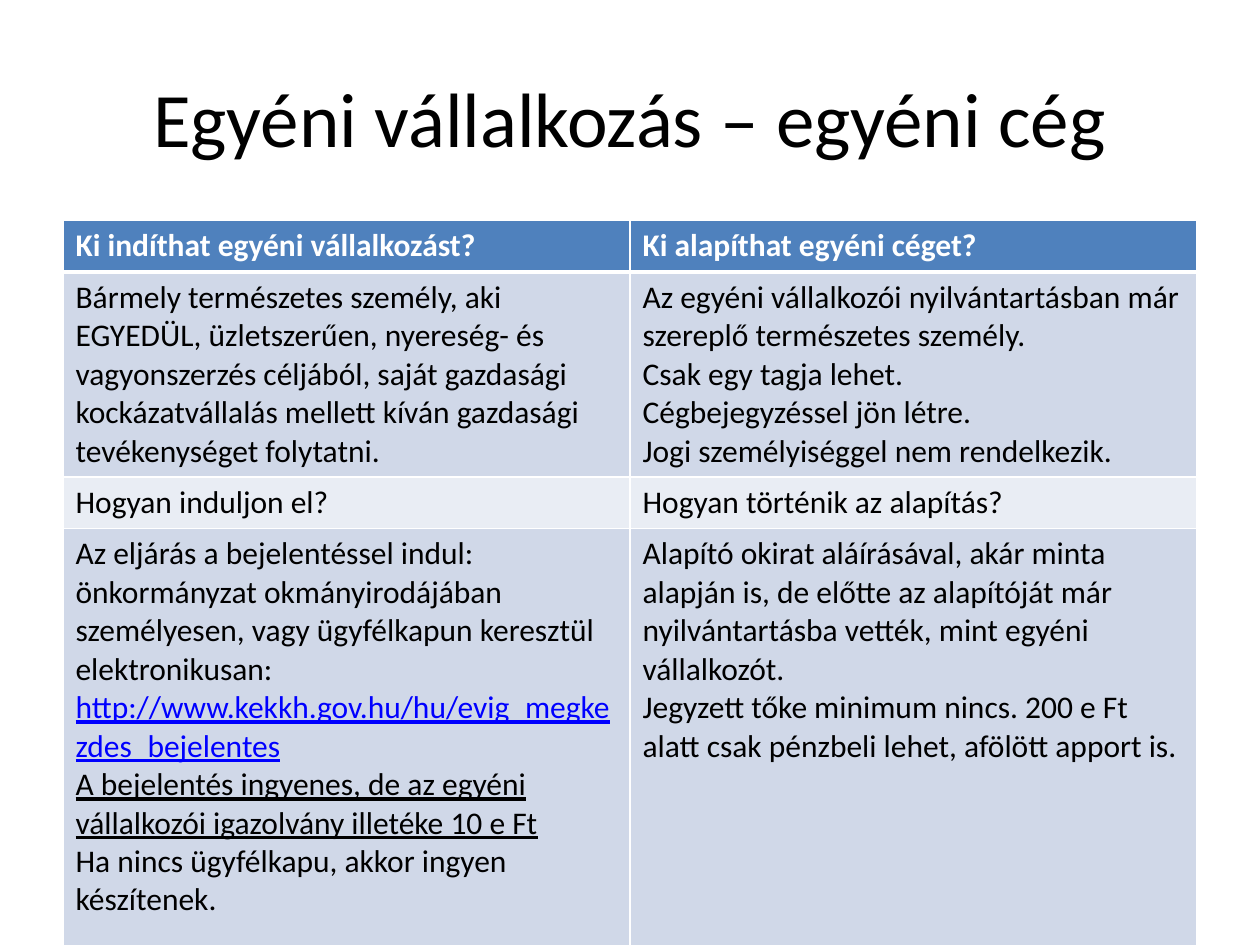
import lxml.etree
import pptx
import pptx.dml.color
import pptx.enum.text
import pptx.oxml.ns
import pptx.util

Inches = pptx.util.Inches

# Content: rows of cells, cells of paragraphs, paragraphs of (text, format) spans
TITLE = "Egyéni vállalkozás – egyéni cég"
LINK = {"color": "0000FF", "underline": True}
UNDERLINED = {"underline": True}
ROWS = [
    [
        [[("Ki indíthat egyéni vállalkozást?", {})]],
        [[("Ki alapíthat egyéni céget?", {})]],
    ],
    [
        [[("Bármely természetes személy, aki EGYEDÜL, üzletszerűen, nyereség- és "
           "vagyonszerzés céljából, saját gazdasági kockázatvállalás mellett kíván "
           "gazdasági tevékenységet folytatni.", {})]],
        [
            [("Az egyéni vállalkozói nyilvántartásban már szereplő természetes személy.", {})],
            [("Csak egy tagja lehet.", {})],
            [("Cégbejegyzéssel jön létre.", {})],
            [("Jogi személyiséggel nem rendelkezik.", {})],
        ],
    ],
    [
        [[("Hogyan induljon el?", {})]],
        [[("Hogyan történik az alapítás?", {})]],
    ],
    [
        [
            [("Az eljárás a bejelentéssel indul: önkormányzat okmányirodájában "
              "személyesen, vagy ügyfélkapun keresztül elektronikusan: ", {}),
             ("http://www.kekkh.gov.hu/hu/evig_megkezdes_bejelentes", LINK)],
            [("A bejelentés ingyenes, de az egyéni vállalkozói igazolvány illetéke "
              "10 e Ft", UNDERLINED)],
            [("Ha nincs ügyfélkapu, akkor ingyen készítenek.", {})],
        ],
        [
            [("Alapító okirat aláírásával, akár minta alapján is, de előtte az "
              "alapítóját már nyilvántartásba vették, mint egyéni vállalkozót.", {})],
            [("Jegyzett tőke minimum nincs. 200 e Ft alatt csak pénzbeli lehet, "
              "afölött apport is.", {})],
        ],
    ],
]
ROW_HEIGHTS = [0.41, 1.62, 0.41, 3.37]
HEADER_FILL = "4F81BD"
BAND_FILLS = ["E9EDF4", "D0D8E8"]


def rgb(value):
    return pptx.dml.color.RGBColor.from_string(value)


def add_text(para, text, size=18, color="000000", bold=False, underline=False):
    span = para.add_run()
    span.text = text
    span.font.name = "Calibri"
    span.font.size = pptx.util.Pt(size)
    span.font.color.rgb = rgb(color)
    span.font.bold = bold
    span.font.underline = underline


def add_borders(cell, color="FFFFFF", **widths):
    qn = pptx.oxml.ns.qn
    properties = cell._tc.get_or_add_tcPr()
    for side, width in widths.items():
        line = lxml.etree.SubElement(
            properties, qn(f"a:ln{side}"), w=str(pptx.util.Pt(width)))
        fill = lxml.etree.SubElement(line, qn("a:solidFill"))
        lxml.etree.SubElement(fill, qn("a:srgbClr"), val=color)


deck = pptx.Presentation()
deck.slide_width, deck.slide_height = Inches(10), Inches(7.5)
page = deck.slides.add_slide(deck.slide_layouts[5])

# Title
title = page.shapes.title
title.left, title.top = Inches(0.5), Inches(0.3)
title.width, title.height = Inches(9), Inches(1.25)
title.text_frame.vertical_anchor = pptx.enum.text.MSO_ANCHOR.MIDDLE
heading = title.text_frame.paragraphs[0]
heading.alignment = pptx.enum.text.PP_ALIGN.CENTER
add_text(heading, TITLE, size=44)

# Comparison table
table = page.shapes.add_table(
    len(ROWS), 2, Inches(0.5), Inches(1.75), Inches(9), Inches(sum(ROW_HEIGHTS))).table
for r, (cells, height) in enumerate(zip(ROWS, ROW_HEIGHTS)):
    table.rows[r].height = Inches(height)
    header = r == 0
    base = {"color": "FFFFFF", "bold": True} if header else {}
    for c, paragraphs in enumerate(cells):
        cell = table.cell(r, c)
        add_borders(cell, L=1, R=1, T=3 if r == 1 else 1, B=3 if header else 1)
        cell.fill.solid()
        cell.fill.fore_color.rgb = rgb(HEADER_FILL if header else BAND_FILLS[r % 2])
        for i, spans in enumerate(paragraphs):
            frame = cell.text_frame
            para = frame.add_paragraph() if i else frame.paragraphs[0]
            for text, style in spans:
                add_text(para, text, **{**base, **style})

deck.save("out.pptx")
